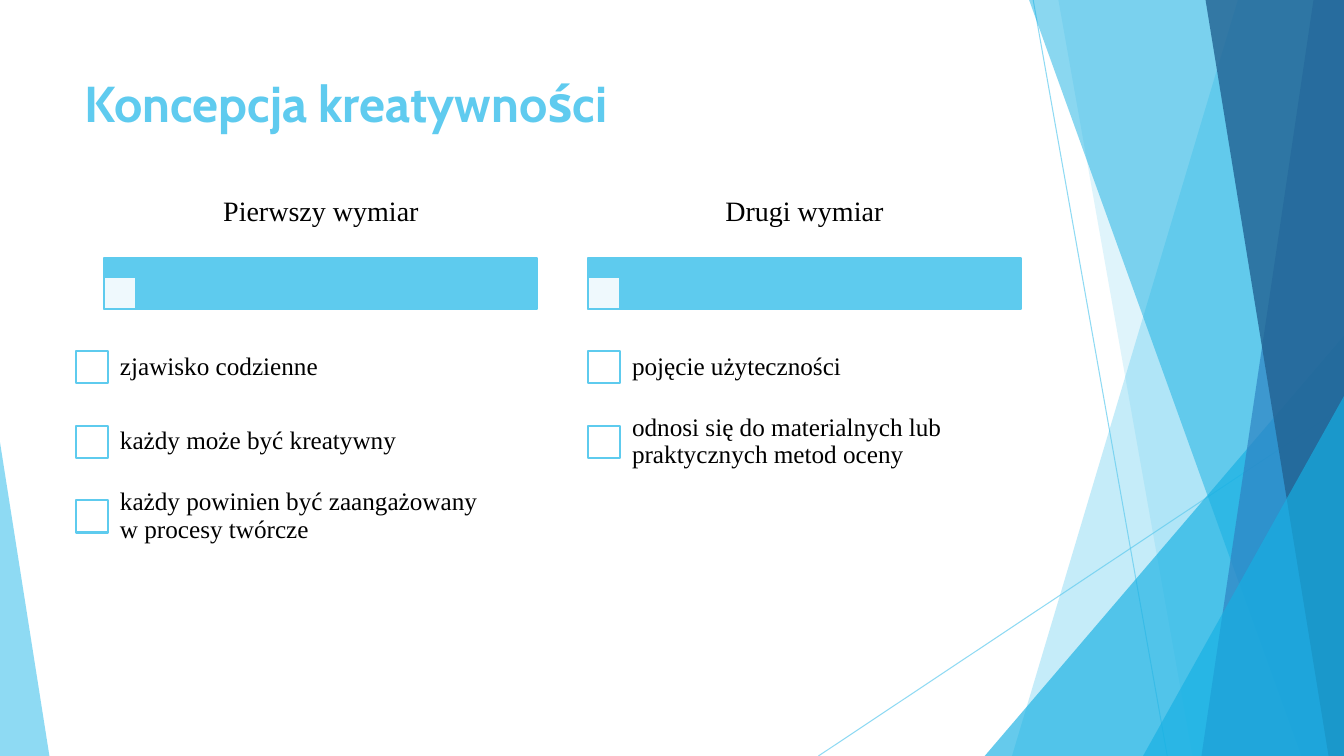
from lxml import etree
from pptx import Presentation
from pptx.dml.color import RGBColor
from pptx.enum import shapes, text
from pptx.oxml.ns import qn
from pptx.util import Pt

SKY = RGBColor(0x5F, 0xCB, 0xEF)
ACCENT = RGBColor(0x5E, 0xCB, 0xEE)
CYAN = RGBColor(0x16, 0xB0, 0xE3)
BLUE = RGBColor(0x2E, 0x83, 0xC3)
NAVY = RGBColor(0x22, 0x62, 0x92)
WHITE = RGBColor(0xFF, 0xFF, 0xFF)
BLACK = RGBColor(0, 0, 0)
WIDTH, HEIGHT = 960, 540
BODY_FONT = "Times New Roman"


def set_alpha(fill, percent):
    """Make a solid fill (of a shape or a line) show at the given opacity."""
    clr = fill._xPr.find(qn("a:solidFill"))[0]
    etree.SubElement(clr, qn("a:alpha"), val=str(percent * 1000))


def paint(sp, color, alpha=100, line=None):
    sp.shadow.inherit = False
    sp.fill.solid()
    sp.fill.fore_color.rgb = color
    if alpha < 100:
        set_alpha(sp.fill, alpha)
    if line is None:
        sp.line.fill.background()
    else:
        sp.line.color.rgb = line
        sp.line.width = Pt(1.5)


def add_ray(s, x1, y1, x2, y2):
    ln = s.shapes.add_connector(shapes.MSO_CONNECTOR.STRAIGHT, Pt(x1), Pt(y1), Pt(x2), Pt(y2))
    ln.line.color.rgb = SKY
    ln.line.width = Pt(0.75)
    set_alpha(ln.line.fill, 70)
    etree.SubElement(ln._element.spPr, qn("a:effectLst"))


def add_band(s, top_x, bottom_x, color, alpha):
    """Full-height band from a slanted left side to the right slide edge."""
    fb = s.shapes.build_freeform(Pt(top_x), 0)
    fb.add_line_segments([(Pt(WIDTH), 0), (Pt(WIDTH), Pt(HEIGHT)), (Pt(bottom_x), Pt(HEIGHT))])
    paint(fb.convert_to_shape(), color, alpha)


def add_corner(s, x, y, w, apex, color, alpha):
    """Right triangle standing on the bottom slide edge; apex 0 is left, 1 right."""
    sp = s.shapes.add_shape(shapes.MSO_SHAPE.ISOSCELES_TRIANGLE, Pt(x), Pt(y), Pt(w), Pt(HEIGHT - y))
    sp.adjustments[0] = apex
    paint(sp, color, alpha)


def add_backdrop(s):
    add_ray(s, 738, 0, 833.8, HEIGHT)
    add_ray(s, WIDTH, 290.2, 584.6, HEIGHT)
    add_band(s, 884.2, 722.9, SKY, 36)
    add_band(s, 756, 851.8, SKY, 20)
    add_corner(s, 703.4, 239.8, 256.6, 1, CYAN, 66)
    add_band(s, 735.1, 929.5, CYAN, 50)
    add_band(s, 938.2, 858.2, BLUE, 70)
    add_band(s, 861.1, 949, NAVY, 80)
    add_corner(s, 816.5, 283, 143.5, 1, CYAN, 66)
    add_corner(s, 0, 316, 35.3, 0, SKY, 70)


def add_title(s, x, y, w, h):
    sp = s.shapes.title
    sp.left, sp.top, sp.width, sp.height = Pt(x), Pt(y), Pt(w), Pt(h)
    tf = sp.text_frame
    tf.text = "Koncepcja kreatywności"
    tf.auto_size = text.MSO_AUTO_SIZE.NONE
    tf.vertical_anchor = text.MSO_ANCHOR.TOP
    p = tf.paragraphs[0]
    p.alignment = text.PP_ALIGN.LEFT
    p.font.name, p.font.size, p.font.bold = "Cabin", Pt(36), True
    p.font.color.rgb = SKY


def add_text(s, x, y, w, h, lines, size, inset, align):
    tf = s.shapes.add_textbox(Pt(x), Pt(y), Pt(w), Pt(h)).text_frame
    tf.word_wrap = True
    tf.vertical_anchor = text.MSO_ANCHOR.MIDDLE
    tf.margin_left = tf.margin_right = tf.margin_top = tf.margin_bottom = Pt(inset)
    tf.text = lines
    for p in tf.paragraphs:
        p.alignment = align
        p.line_spacing = 0.9
        p.font.name, p.font.size = BODY_FONT, Pt(size)
        p.font.color.rgb = BLACK


def add_box(s, x, y, w, h, color, alpha=100):
    sp = s.shapes.add_shape(shapes.MSO_SHAPE.RECTANGLE, Pt(x), Pt(y), Pt(w), Pt(h))
    paint(sp, color, alpha, ACCENT)


def add_column(s, x, y, w, bar_x, heading, items):
    """Heading over a bar, then a checklist aligned to the column's left side."""
    head_h, bar_w, bar_h, box, row_h = 65.5, 309.6, 36.6, 23, 53.4
    bar_y = y + head_h
    add_box(s, bar_x, bar_y, bar_w, bar_h, ACCENT)
    add_box(s, bar_x, bar_y + bar_h - box, box, box, WHITE, 90)
    add_text(s, x, y, w, head_h, heading, 20, 2.5, text.PP_ALIGN.CENTER)
    for i, item in enumerate(items):
        row_y = bar_y + 51.1 + i * row_h
        add_box(s, x, row_y + (row_h - box) / 2, box, box, WHITE)
        add_text(s, x + 21.6, row_y, 288, row_h, item, 18, 10.1, text.PP_ALIGN.LEFT)


def main():
    prs = Presentation()
    prs.slide_width, prs.slide_height = Pt(WIDTH), Pt(HEIGHT)
    s = prs.slides.add_slide(prs.slide_layouts[5])
    add_backdrop(s)
    add_title(s, 53.3, 48.2, 676.8, 70.6)
    add_column(s, 54, 118.8, 350.6, 74.2, "Pierwszy wymiar", [
        "zjawisko codzienne",
        "każdy może być kreatywny",
        "każdy powinien być zaangażowany\nw procesy twórcze",
    ])
    add_column(s, 419.8, 118.8, 309.6, 419.8, "Drugi wymiar", [
        "pojęcie użyteczności",
        "odnosi się do materialnych lub\npraktycznych metod oceny",
    ])
    prs.save("out.pptx")


if __name__ == "__main__":
    main()
